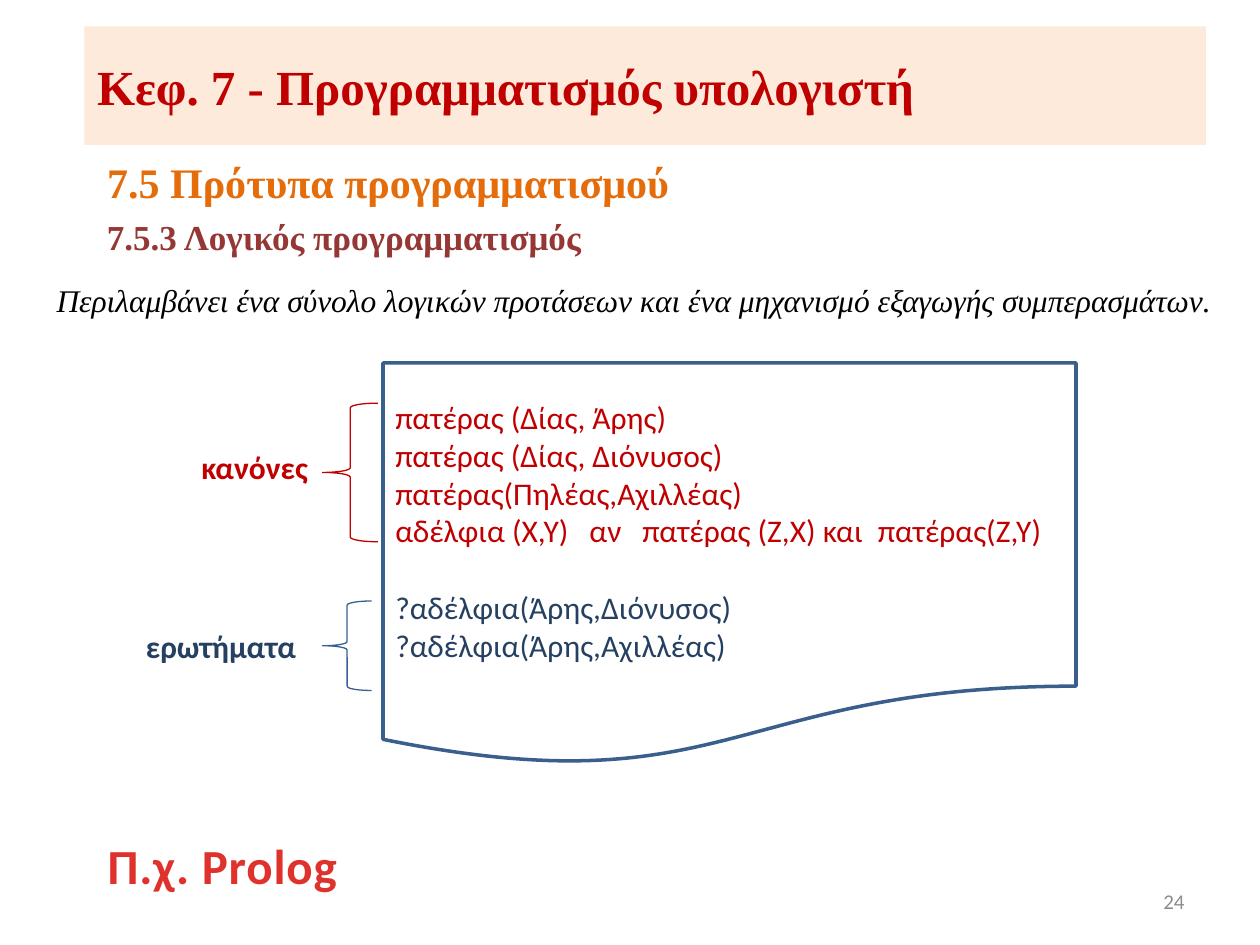
import pptx
import pptx.util
import pptx.dml.color
import pptx.enum.shapes
import pptx.enum.text
import lxml.etree

Inches = pptx.util.Inches
Pt = pptx.util.Pt
MSO_SHAPE = pptx.enum.shapes.MSO_SHAPE
ANCHOR = pptx.enum.text.MSO_ANCHOR
ALIGN = pptx.enum.text.PP_ALIGN
NS = "{http://schemas.openxmlformats.org/drawingml/2006/main}"
SERIF, SANS = "Times New Roman", "Calibri"
COLORS = {
    "band": "FDEADA", "red": "C00000", "orange": "E46C0A", "brown": "953735",
    "black": "000000", "white": "FFFFFF", "navy": "254061", "blue": "376092",
    "outline": "3A5F8C", "example": "E0322D", "grey": "8C8C8C",
}
RULES = [
    "πατέρας (Δίας, Άρης)",
    "πατέρας (Δίας, Διόνυσος)",
    "πατέρας(Πηλέας,Αχιλλέας)",
    "αδέλφια (Χ,Υ)\tαν\tπατέρας (Ζ,Χ) και\tπατέρας(Ζ,Υ)",
]
QUERIES = ["?αδέλφια(Άρης,Διόνυσος)", "?αδέλφια(Άρης,Αχιλλέας)"]
RULE_TABS = [1.54, 1.96, 3.83]


def rgb(name):
    return pptx.dml.color.RGBColor.from_string(COLORS[name])


def place(sp, box):
    sp.left, sp.top, sp.width, sp.height = [Inches(v) for v in box]


def style(p, size, color, font=SANS, bold=False, italic=False, align=ALIGN.LEFT):
    p.alignment = align
    p.font.size, p.font.name = Pt(size), font
    p.font.bold, p.font.italic = bold, italic
    p.font.color.rgb = rgb(color)


def fill_text(sp, text, size, color, anchor=ANCHOR.TOP, wrap=True, **kwargs):
    tf = sp.text_frame
    tf.word_wrap, tf.vertical_anchor = wrap, anchor
    tf.auto_size = pptx.enum.text.MSO_AUTO_SIZE.NONE
    p = tf.paragraphs[0]
    p.text = text
    style(p, size, color, **kwargs)
    return tf


def add_label(s, box, text, size, color, **kwargs):
    sp = s.shapes.add_textbox(*[Inches(v) for v in box])
    return fill_text(sp, text, size, color, **kwargs)


def add_outline(s, kind, box, color, width):
    sp = s.shapes.add_shape(kind, *[Inches(v) for v in box])
    sp.shadow.inherit = False
    sp.fill.background()
    sp.line.color.rgb = rgb(color)
    sp.line.width = Pt(width)
    return sp


def add_headings(s, title_box, section_box, topic_box):
    title, section = s.shapes.title, s.placeholders[1]
    place(title, title_box)
    title.fill.solid()
    title.fill.fore_color.rgb = rgb("band")
    fill_text(title, "Κεφ. 7 - Προγραμματισμός υπολογιστή", 28, "red",
              anchor=ANCHOR.MIDDLE, font=SERIF, bold=True)
    place(section, section_box)
    tf = fill_text(section, "7.5 Πρότυπα προγραμματισμού", 24, "orange", font=SERIF, bold=True)
    tf.paragraphs[0].space_before = Pt(0)
    topic = add_label(s, topic_box, "7.5.3 Λογικός προγραμματισμός", 20, "brown",
                      font=SERIF, bold=True)
    for frame in (tf, topic):
        frame.margin_top = Inches(0.09)


def add_tabs(p, stops):
    tabs = lxml.etree.SubElement(p._p.get_or_add_pPr(), NS + "tabLst")
    for stop in stops:
        lxml.etree.SubElement(tabs, NS + "tab", pos=str(Inches(stop)), algn="l")


def add_program(s, box):
    sp = add_outline(s, MSO_SHAPE.FLOWCHART_DOCUMENT, box, "outline", 2)
    sp.fill.solid()
    sp.fill.fore_color.rgb = rgb("white")
    tf = sp.text_frame
    tf.word_wrap, tf.vertical_anchor = True, ANCHOR.TOP
    tf.margin_top = Inches(0.28)
    lines = [(t, "red") for t in RULES] + [(t, "navy") for t in QUERIES]
    for i, (text, color) in enumerate(lines):
        p = tf.add_paragraph() if i else tf.paragraphs[0]
        p.text = text
        if i == len(RULES):
            p.space_before = Pt(22)
        if "\t" in text:
            add_tabs(p, RULE_TABS)
        style(p, 18, color)


def add_brace(s, box, line, label_box, text, color):
    add_outline(s, MSO_SHAPE.LEFT_BRACE, box, line, 0.75)
    add_label(s, label_box, text, 18, color, bold=True)


def add_example(s, box):
    tf = add_label(s, box, "Π.χ. Prolog", 28, "example", wrap=False,
                   bold=True, align=ALIGN.CENTER)
    tf.paragraphs[0].runs[0]._r.get_or_add_rPr().set("spc", "50")


def main():
    prs = pptx.Presentation()
    prs.slide_width, prs.slide_height = Inches(10), Inches(7.5)
    s = prs.slides.add_slide(prs.slide_layouts[0])
    add_headings(s, (0.67, 0.21, 8.9, 0.94), (0.75, 1.15, 7, 0.55), (0.75, 1.62, 4.33, 0.55))
    add_label(s, (0.35, 2.18, 9.45, 0.4),
              "Περιλαμβάνει ένα σύνολο λογικών προτάσεων και ένα μηχανισμό "
              "εξαγωγής συμπερασμάτων.", 18, "black", font=SERIF, italic=True)
    add_program(s, (3.04, 2.88, 5.5, 3.2))
    add_brace(s, (2.56, 3.2, 0.44, 1.1), "red", (1.5, 3.51, 1.3, 0.4), "κανόνες", "red")
    add_brace(s, (2.56, 4.77, 0.39, 0.71), "blue", (1.06, 4.93, 1.74, 0.4), "ερωτήματα", "navy")
    add_example(s, (0.74, 6.58, 2.05, 0.57))
    add_label(s, (7.17, 6.95, 2.33, 0.4), "24", 12, "grey",
              anchor=ANCHOR.MIDDLE, align=ALIGN.RIGHT)
    prs.save("out.pptx")


if __name__ == "__main__":
    main()
